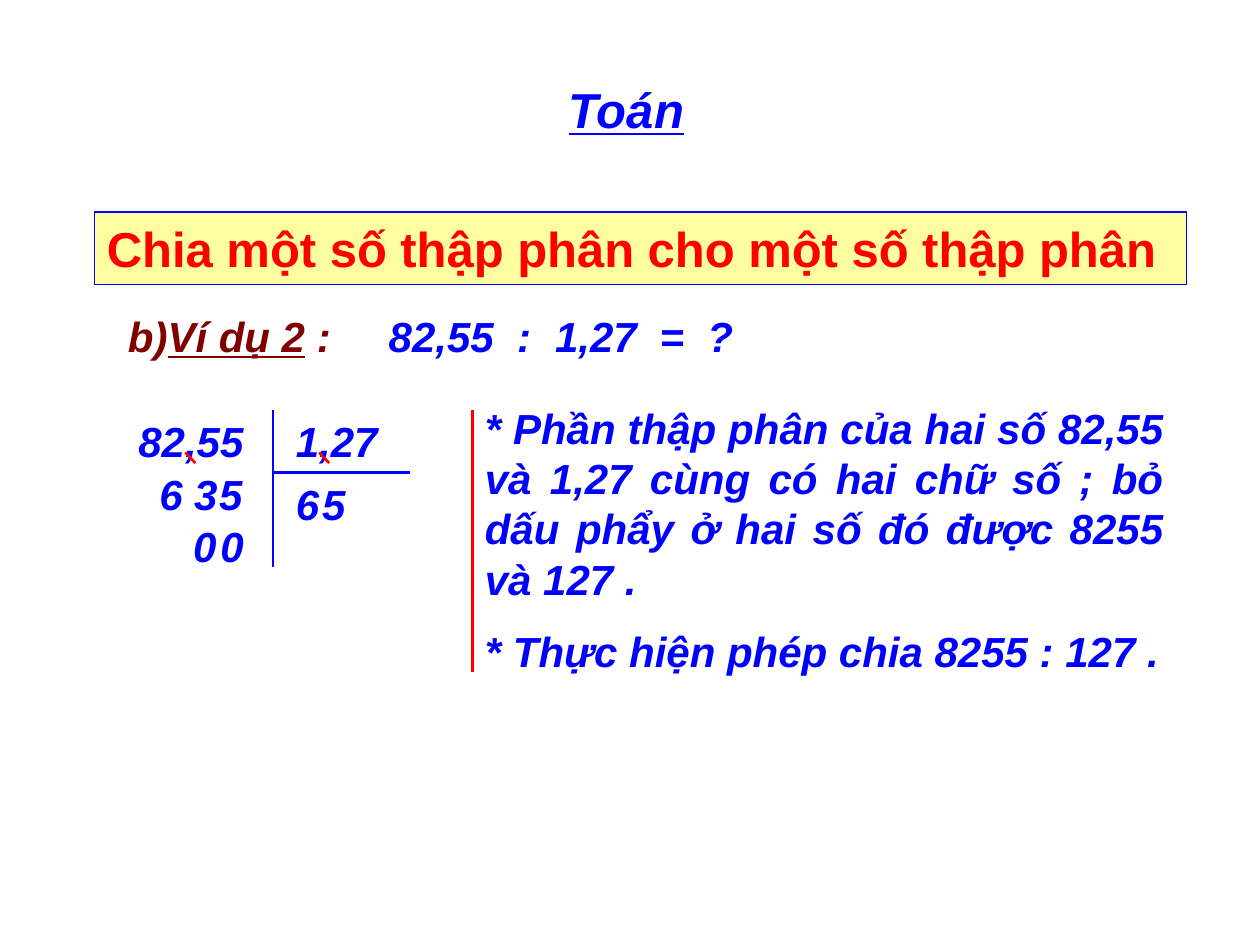
from dataclasses import dataclass

from lxml.etree import SubElement
from pptx import Presentation
from pptx.dml.color import RGBColor
from pptx.enum.shapes import MSO_CONNECTOR as Connector, MSO_SHAPE as Preset
from pptx.enum.text import MSO_ANCHOR as Anchor, MSO_AUTO_SIZE as AutoSize, PP_ALIGN as Align
from pptx.oxml.ns import qn
from pptx.util import Inches, Pt


@dataclass(frozen=True)
class Theme:
    font: str = "Arial"
    blue: str = "0000FF"
    red: str = "FF0000"
    maroon: str = "800000"
    yellow: str = "FEFEA0"
    heading: int = 28
    body: int = 24
    rule: float = 1.5
    border: float = 0.75


class LessonSlide:
    """Places elements on a grid of 120 columns by 90 rows."""

    COLUMNS, ROWS = 120, 90

    def __init__(self, deck, theme):
        self.theme = theme
        self.slide = deck.slides.add_slide(deck.slide_layouts[6])
        self.column = deck.slide_width / self.COLUMNS
        self.row = deck.slide_height / self.ROWS

    def place(self, *lengths):
        return [round(n * unit) for n, unit in zip(lengths, (self.column, self.row) * 2)]

    def fill_text(self, shape, runs, align=Align.LEFT, **style):
        """Fills a shape with (wording, changed style) runs."""
        frame = shape.text_frame
        layout = {"word_wrap": True, "auto_size": AutoSize.SHAPE_TO_FIT_TEXT,
                  "vertical_anchor": Anchor.TOP}
        for name, value in layout.items():
            setattr(frame, name, value)
        paragraph = frame.paragraphs[0]
        paragraph.alignment = align
        base = {"name": self.theme.font, "size": self.theme.body, "bold": True,
                "italic": True, "color": self.theme.blue}
        for wording, changes in runs:
            run = paragraph.add_run()
            run.text = wording
            look = {**base, **style, **changes}
            run.font.color.rgb = RGBColor.from_string(look.pop("color"))
            look["size"] = Pt(look["size"])
            for name, value in look.items():
                setattr(run.font, name, value)
        return paragraph

    def text(self, box, wording, **style):
        runs = [(wording, {})] if isinstance(wording, str) else wording
        return self.fill_text(self.slide.shapes.add_textbox(*self.place(*box)), runs, **style)

    def banner(self, box, wording, **style):
        shape = self.slide.shapes.add_shape(Preset.RECTANGLE, *self.place(*box))
        shape.shadow.inherit = False
        shape.fill.solid()
        shape.fill.fore_color.rgb = RGBColor.from_string(self.theme.yellow)
        shape.line.color.rgb = RGBColor.from_string(self.theme.blue)
        shape.line.width = Pt(self.theme.border)
        self.fill_text(shape, [(wording, {})], **style)

    def rule(self, ends, color):
        line = self.slide.shapes.add_connector(Connector.STRAIGHT, *self.place(*ends))
        line.line.color.rgb = RGBColor.from_string(color)
        line.line.width = Pt(self.theme.rule)
        SubElement(line._element.spPr, qn("a:effectLst"))

    def tab_stops(self, paragraph, inches):
        stops = SubElement(paragraph._p.get_or_add_pPr(), qn("a:tabLst"))
        for stop in inches:
            SubElement(stops, qn("a:tab"), pos=str(Inches(stop)), algn="l")


def main():
    deck = Presentation()
    deck.slide_width, deck.slide_height = Inches(10), Inches(7.5)
    theme = Theme()
    lesson = LessonSlide(deck, theme)

    # Subject and lesson title
    lesson.text((53, 7, 14, 6.8), "Toán", size=theme.heading, underline=True)
    lesson.banner((9, 20.2, 104, 6.9), "Chia một số thập phân cho một số thập phân",
                  size=theme.heading, italic=False, color=theme.red)

    # Example, its terms spaced out by tab stops
    label = {"color": theme.maroon}
    example = lesson.text((11, 29, 63, 6), [
        ("b)", label),
        ("Ví dụ 2", {**label, "underline": True}),
        (" :", label),
        ("\t82,55\t:\t1,27\t=\t?", {}),
    ])
    lesson.tab_stops(example, (2.07, 3.09, 3.39, 4.22, 4.6))

    # Long division: dividend, divisor and frame
    lesson.text((12, 39, 14, 6), "82,55")
    lesson.text((27, 39, 12, 6), "1,27")
    lesson.rule((26, 39, 26, 54), theme.blue)
    lesson.rule((26, 45, 39, 45), theme.blue)

    # Struck-out decimal commas
    for left in (17.65, 30.4):
        lesson.rule((left, 43.1, left + 0.95, 44.1), theme.red)

    # Digits of the quotient and the two remainders: row, width, (column, digit)
    digit_rows = (
        (45, 5, ((27, "6"), (29.5, "5"))),
        (44, 5, ((14, "6"), (17.3, "3"), (19.7, "5"))),
        (49, 4, ((17.2, "0"), (19.8, "0"))),
    )
    for top, width, digits in digit_rows:
        for left, digit in digits:
            lesson.text((left, top, width, 6), digit)

    # Explanation
    lesson.rule((45, 39, 45, 64), theme.red)
    lesson.text((45, 37.7, 67, 20.4),
                "* Phần thập phân của hai số 82,55 và 1,27 cùng có hai chữ số ; "
                "bỏ dấu phẩy ở hai số đó được 8255 và 127 .", align=Align.JUSTIFY)
    lesson.text((45, 59, 68, 6), "* Thực hiện phép chia 8255 : 127 .")

    deck.save("out.pptx")


if __name__ == "__main__":
    main()
